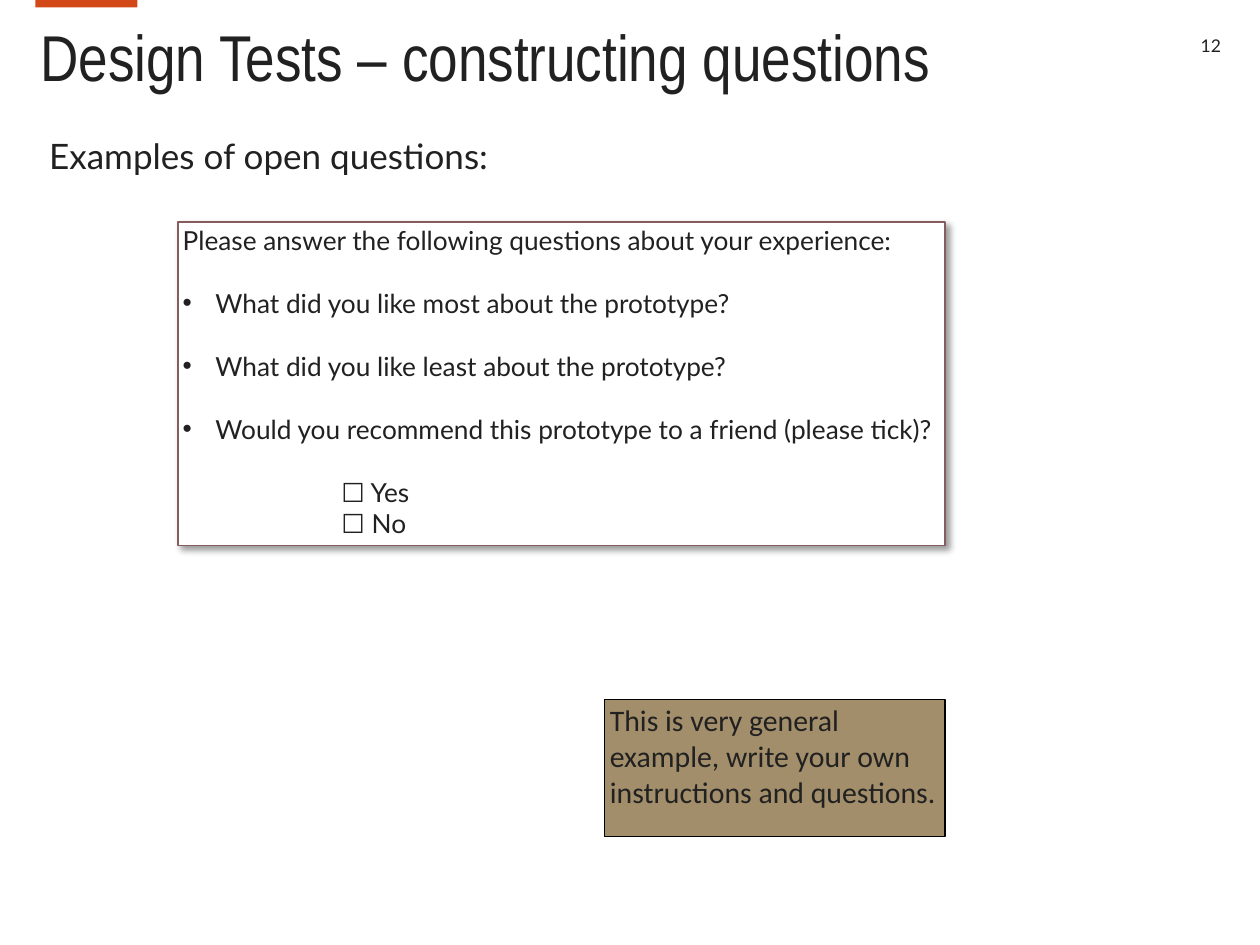
from lxml.etree import SubElement
from pptx import Presentation
from pptx.dml.color import RGBColor
from pptx.enum.shapes import MSO_SHAPE as Shape
from pptx.enum.text import MSO_ANCHOR as Anchor, PP_ALIGN as Align
from pptx.oxml.ns import qn
from pptx.util import Inches, Pt

COLORS = {
    "accent": "D34817", "text": "212121", "paper": "FFFFFF",
    "frame": "855D5D", "note": "A28E6A", "black": "000000",
}


def add_box(page, left, top, width, height, fill=None, line=None, line_width=1):
    """Add a rectangle with the common margins; no fill means a text box."""
    place = [Inches(value) for value in (left, top, width, height)]
    if fill:
        box = page.shapes.add_shape(Shape.RECTANGLE, *place)
        box.shadow.inherit = False
        box.fill.solid()
        box.fill.fore_color.rgb = RGBColor.from_string(COLORS[fill])
        if line:
            box.line.color.rgb = RGBColor.from_string(COLORS[line])
            box.line.width = Pt(line_width)
        else:
            box.line.fill.background()
    else:
        box = page.shapes.add_textbox(*place)
    frame = box.text_frame
    frame.word_wrap = True
    frame.vertical_anchor = Anchor.TOP
    frame.margin_left = frame.margin_right = Inches(0.04)
    frame.margin_top = frame.margin_bottom = Inches(0.02)
    return box


def write(para, text, size, font="Lato", align=Align.LEFT):
    para.alignment = align
    span = para.add_run()
    span.text = text
    span.font.size = Pt(size)
    span.font.name = font
    span.font.color.rgb = RGBColor.from_string(COLORS["text"])


deck = Presentation()
deck.slide_width, deck.slide_height = Inches(10), Inches(7.5)
page = deck.slides.add_slide(deck.slide_layouts[6])

# Accent bar, title, page number and subtitle
add_box(page, 0.28, 0, 0.81, 0.06, fill="accent")

title = add_box(page, 0.28, 0.26, 8.62, 0.98).text_frame.paragraphs[0]
title.line_spacing = 0.75
write(title, "Design Tests – constructing questions", 37, "Arial Narrow")

number = add_box(page, 9.05, 0.26, 0.68, 0.21).text_frame.paragraphs[0]
write(number, "12", 10, align=Align.RIGHT)

subtitle = add_box(page, 0.35, 1.05, 5.95, 0.38).text_frame.paragraphs[0]
write(subtitle, "Examples of open questions:", 20)

# Questionnaire card with a soft shadow
card = add_box(page, 1.41, 1.76, 6.09, 2.57, fill="paper", line="frame")
effects = card._element.spPr.find(qn("a:effectLst"))
shadow = SubElement(effects, qn("a:outerShdw"), blurRad=str(Pt(4)), dist=str(Pt(3)),
                    dir=str(45 * 60000), algn="tl", rotWithShape="0")
shade = SubElement(shadow, qn("a:srgbClr"), val=COLORS["black"])
SubElement(shade, qn("a:alpha"), val="40000")

# Questions: text, left margin, first-line indent, space before in points
LINE = 18
questions = [
    ("Please answer the following questions about your experience:", 0, 0, 0),
    ("What did you like most about the prototype?", 0.26, -0.26, LINE),
    ("What did you like least about the prototype?", 0.26, -0.26, LINE),
    ("Would you recommend this prototype to a friend (please tick)?", 0.26, -0.26, LINE),
    ("☐ Yes", 1.26, 0, LINE),
    ("☐ No", 1.26, 0, 0),
]
for index, (text, margin, indent, space) in enumerate(questions):
    frame = card.text_frame
    para = frame.add_paragraph() if index else frame.paragraphs[0]
    para.space_before = Pt(space)
    write(para, text, 15)
    props = para._p.get_or_add_pPr()
    props.set("marL", str(Inches(margin)))
    props.set("indent", str(Inches(indent)))
    if indent:
        SubElement(props, qn("a:buFont"), typeface="Arial")
        SubElement(props, qn("a:buChar"), char="•")

# Side note
note = add_box(page, 4.8, 5.55, 2.7, 1.09, fill="note", line="black", line_width=0.75)
write(note.text_frame.paragraphs[0],
      "This is very general example, write your own instructions and questions.",
      17, "Calibri")

deck.save("out.pptx")
